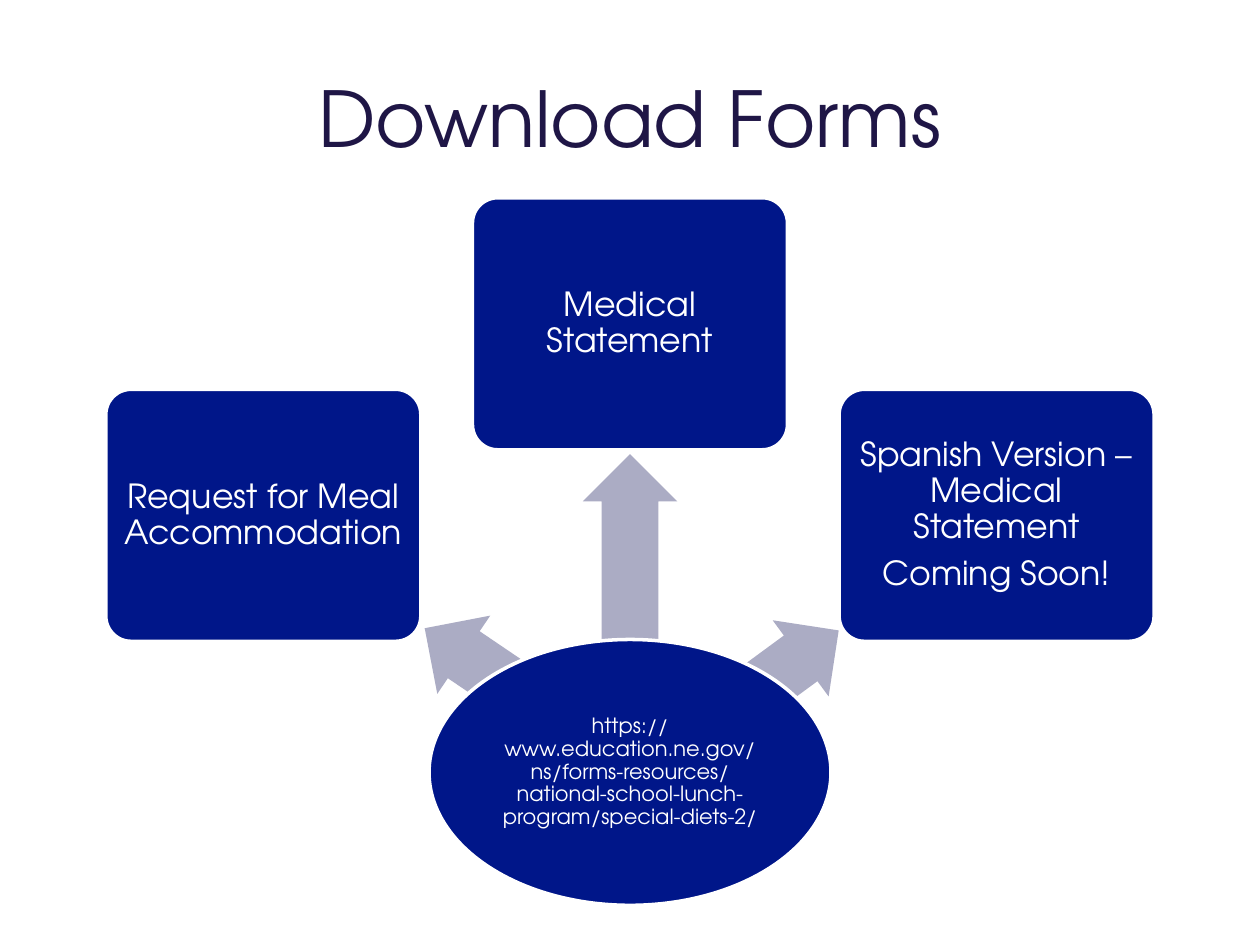
from dataclasses import dataclass

from pptx import Presentation
from pptx import util as u
from pptx.dml.color import RGBColor
from pptx.enum import shapes, text

COLUMNS, ROWS = 100, 75
WIDTH, HEIGHT = u.Inches(10), u.Inches(7.5)
FONT = "TeX Gyre Adventor"
NAVY, INK, GREY, WHITE = "001689", "1F1646", "ABACC4", "FFFFFF"
KIND = shapes.MSO_SHAPE


@dataclass(frozen=True)
class Area:
    center_column: float
    center_row: float
    columns: float
    rows: float

    def frame(self) -> tuple[int, int, int, int]:
        column, row = WIDTH / COLUMNS, HEIGHT / ROWS
        return (
            round((self.center_column - self.columns / 2) * column),
            round((self.center_row - self.rows / 2) * row),
            round(self.columns * column),
            round(self.rows * row),
        )


@dataclass(frozen=True)
class Arrow:
    area: Area
    rotation: float


@dataclass(frozen=True)
class Form:
    lines: tuple[str, ...]
    area: Area
    arrow: Arrow


FORMS = (
    Form(("Request for Meal Accommodation",), Area(20.9, 40.9, 25, 20),
         Arrow(Area(42.4, 55.75, 21, 7.5), 34.1)),
    Form(("Medical Statement",), Area(50, 25.7, 25, 20),
         Arrow(Area(50, 47.85, 23.6, 7.5), 90)),
    Form(("Spanish Version – Medical Statement", "Coming Soon!"), Area(79.1, 40.9, 25, 20),
         Arrow(Area(58.1, 56.25, 21, 7.5), 143.7)),
)
ADDRESS = ("https://www.education.ne.gov/ns/forms-resources/"
           "national-school-lunch-program/special-diets-2/")


def color(value: str) -> RGBColor:
    return RGBColor.from_string(value)


def write(shape, lines: tuple[str, ...], size: float, ink: str, inset: float,
          spacing: float = 1, after: float = 0) -> None:
    frame = shape.text_frame
    frame.word_wrap = True
    frame.vertical_anchor = text.MSO_ANCHOR.MIDDLE
    frame.margin_left = frame.margin_right = u.Inches(inset)
    frame.margin_top = frame.margin_bottom = u.Inches(inset)
    for index, line in enumerate(lines):
        paragraph = frame.add_paragraph() if index else frame.paragraphs[0]
        paragraph.alignment = text.PP_ALIGN.CENTER
        paragraph.line_spacing = spacing
        paragraph.space_after = u.Pt(after)
        run = paragraph.add_run()
        run.text = line
        run.font.name = FONT
        run.font.size = u.Pt(size)
        run.font.color.rgb = color(ink)


def draw_shape(slide, kind, area: Area, fill: str):
    shape = slide.shapes.add_shape(kind, *area.frame())
    shape.shadow.inherit = False
    shape.fill.solid()
    shape.fill.fore_color.rgb = color(fill)
    shape.line.fill.background()
    return shape


def draw_node(slide, kind, area: Area, lines: tuple[str, ...], size: float, inset: float):
    shape = draw_shape(slide, kind, area, NAVY)
    shape.line.color.rgb = color(WHITE)
    shape.line.width = u.Pt(2)
    write(shape, lines, size, WHITE, inset, spacing=0.9, after=size * 0.35)
    return shape


def draw_arrow(slide, arrow: Arrow) -> None:
    shape = draw_shape(slide, KIND.LEFT_ARROW, arrow.area, GREY)
    shape.adjustments[0] = 0.6
    shape.adjustments[1] = 0.5
    shape.rotation = arrow.rotation


def draw_form(slide, form: Form) -> None:
    draw_arrow(slide, form.arrow)
    box = draw_node(slide, KIND.ROUNDED_RECTANGLE, form.area, form.lines, 19, 0.04)
    box.adjustments[0] = 0.1


def main() -> None:
    presentation = Presentation()
    presentation.slide_width, presentation.slide_height = WIDTH, HEIGHT
    slide = presentation.slides.add_slide(presentation.slide_layouts[6])
    title = slide.shapes.add_textbox(*Area(50, 9.25, 90, 12.5).frame())
    write(title, ("Download Forms",), 44, INK, 0.05)
    for form in FORMS:
        draw_form(slide, form)
    draw_node(slide, KIND.OVAL, Area(50, 61.3, 31.9, 21.1), (ADDRESS,), 12, 0.01)
    presentation.save("out.pptx")


if __name__ == "__main__":
    main()
